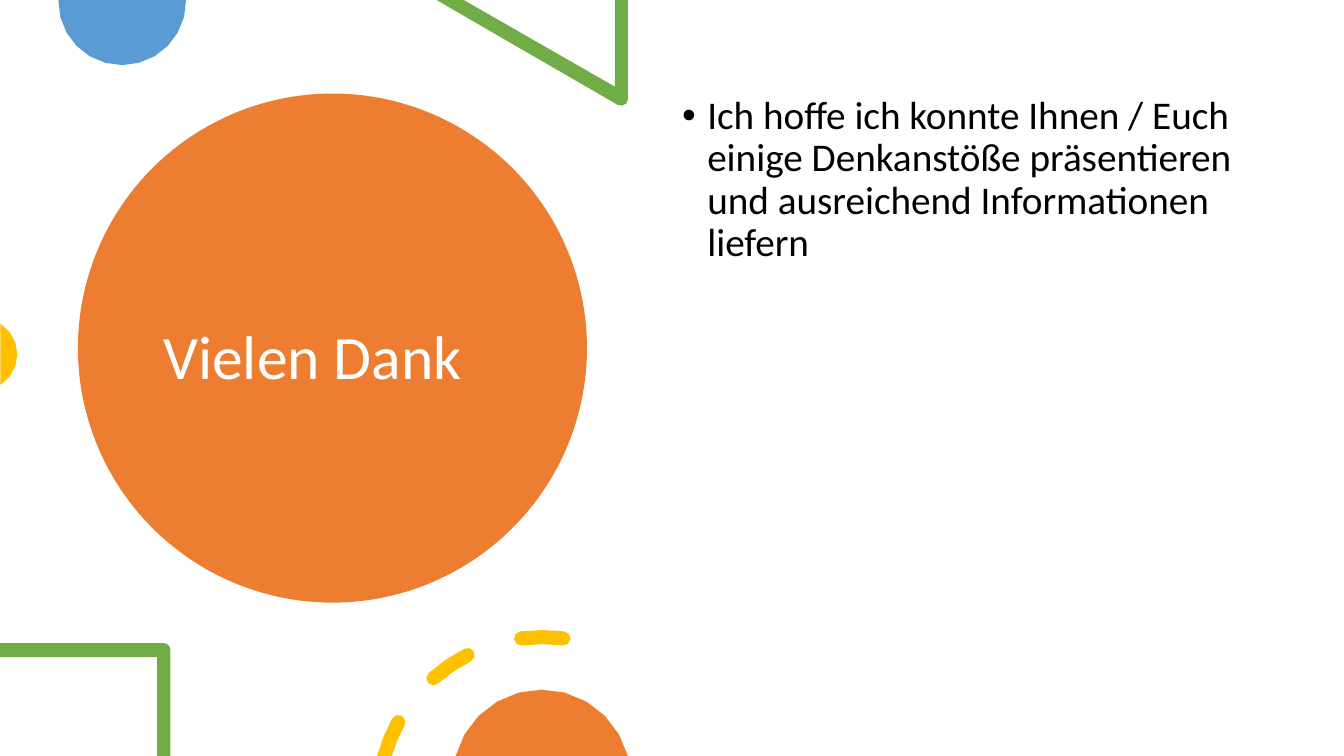
import math

import pptx
import pptx.dml.color
import pptx.enum.shapes
import pptx.enum.text
import pptx.util
from lxml import etree

COLUMNS, ROWS = 160, 90
ORANGE, BLUE, GREEN, YELLOW = "ED7D31", "5B9BD5", "70AD47", "FFC000"
WHITE, BLACK = "FFFFFF", "000000"


def color(hex_code):
    return pptx.dml.color.RGBColor.from_string(hex_code)


def arc(center, radius, start, end, steps):
    angles = [math.radians(start + (end - start) * i / steps) for i in range(steps + 1)]
    return [(center[0] + radius * math.cos(a), center[1] + radius * math.sin(a))
            for a in angles]


def cap(center, radius, half_width, angle, turn):
    middle = arc(center, radius, angle, angle, 1)[0]
    return arc(middle, half_width, turn, turn + 180, 4)[1:-1]


def dash(center, radius, half_width, start, end):
    return (arc(center, radius + half_width, start, end, 2)
            + cap(center, radius, half_width, end, end)
            + arc(center, radius - half_width, end, start, 2)
            + cap(center, radius, half_width, start, start + 180))


def cut_dash(center, radius, half_width, end, floor):
    def floor_angle(r):
        return 180 + math.degrees(math.asin((center[1] - floor) / r))

    outer, inner = radius + half_width, radius - half_width
    return (arc(center, outer, floor_angle(outer), end, 2)
            + cap(center, radius, half_width, end, end)
            + arc(center, inner, end, floor_angle(inner), 2))


def write(frame, text, size, hex_code, font="Calibri", anchor="TOP", before=0, bullet=False):
    frame.word_wrap = True
    frame.auto_size = pptx.enum.text.MSO_AUTO_SIZE.NONE
    frame.vertical_anchor = pptx.enum.text.MSO_ANCHOR[anchor]
    paragraph = frame.paragraphs[0]
    paragraph.alignment = pptx.enum.text.PP_ALIGN.LEFT
    paragraph.line_spacing = 0.9
    paragraph.space_before = pptx.util.Pt(before)
    run = paragraph.add_run()
    run.text = text
    run.font.name = font
    run.font.size = pptx.util.Pt(size)
    run.font.color.rgb = color(hex_code)
    if bullet:
        properties = paragraph._p.get_or_add_pPr()
        indent = pptx.util.Inches(0.25)
        properties.set("marL", str(indent))
        properties.set("indent", str(-indent))
        namespace = properties.nsmap["a"]
        etree.SubElement(properties, f"{{{namespace}}}buFont", typeface="Arial")
        etree.SubElement(properties, f"{{{namespace}}}buChar", char="•")


class Canvas:
    def __init__(self, presentation):
        self.cell_width = presentation.slide_width / COLUMNS
        self.cell_height = presentation.slide_height / ROWS
        self.slide = presentation.slides.add_slide(presentation.slide_layouts[1])
        background = self.slide.background.fill
        background.solid()
        background.fore_color.rgb = color(WHITE)

    def place(self, column, row):
        return round(column * self.cell_width), round(row * self.cell_height)

    def paint(self, shape, hex_code):
        shape.shadow.inherit = False
        shape.fill.solid()
        shape.fill.fore_color.rgb = color(hex_code)
        shape.line.fill.background()

    def circle(self, column, row, diameter, hex_code):
        disc = self.slide.shapes.add_shape(
            pptx.enum.shapes.MSO_SHAPE.OVAL,
            *self.place(column, row), *self.place(diameter, diameter))
        self.paint(disc, hex_code)

    def outline(self, contours, hex_code):
        contours = [[self.place(*point) for point in contour] for contour in contours]
        builder = self.slide.shapes.build_freeform(*contours[0][0])
        for index, contour in enumerate(contours):
            if index:
                builder.move_to(*contour[0])
            builder.add_line_segments(contour[1:], close=True)
        self.paint(builder.convert_to_shape(), hex_code)

    def placeholder(self, index, column, row, width, height, text, **text_format):
        holder = self.slide.placeholders[index]
        holder.left, holder.top = self.place(column, row)
        holder.width, holder.height = self.place(width, height)
        self.slide.shapes.element.append(holder.element)
        write(holder.text_frame, text, **text_format)


def main():
    presentation = pptx.Presentation()
    presentation.slide_width = pptx.util.Inches(13.33)
    presentation.slide_height = pptx.util.Inches(7.5)
    canvas = Canvas(presentation)

    canvas.circle(9.28, 11.14, 60.6, ORANGE)
    canvas.placeholder(0, 18.24, 16.1, 42.48, 53.4, "Vielen Dank",
                       size=44, hex_code=WHITE, anchor="MIDDLE")

    canvas.outline([arc((14.55, 0.15), 7.6, -1, 181, 12)], BLUE)
    triangle = [(74.76, 0), (73.2, 0), (73.2, 10.32), (55.2, 0), (51.96, 0)]
    canvas.outline([triangle + arc((73.94, 11.78), 0.82, 120, 0, 3)], GREEN)
    canvas.outline([arc((-2.25, 42.18), 4.32, -58, 58, 6)], YELLOW)

    canvas.placeholder(1, 80, 10.8, 69, 64.2,
                       "Ich hoffe ich konnte Ihnen / Euch einige Denkanstöße "
                       "präsentieren und ausreichend Informationen liefern",
                       size=28, hex_code=BLACK, before=10, bullet=True)

    square = [(0, 76.56), (0, 78.24), (18.72, 78.24), (18.72, ROWS), (20.28, ROWS)]
    canvas.outline([square + arc((19.5, 77.34), 0.78, 0, -90, 3)], GREEN)

    ring = ((64.56, 95.4), 19.56, 0.84)
    dashes = [dash(*ring, start, end) for start, end in ((228.5, 243), (262.6, 277.4))]
    canvas.outline([cut_dash(*ring, 208.9, ROWS)] + dashes, YELLOW)
    canvas.outline([arc((64.5, 92.7), 10.6, 194.76, 345.24, 10)], ORANGE)

    presentation.save("out.pptx")


if __name__ == "__main__":
    main()
